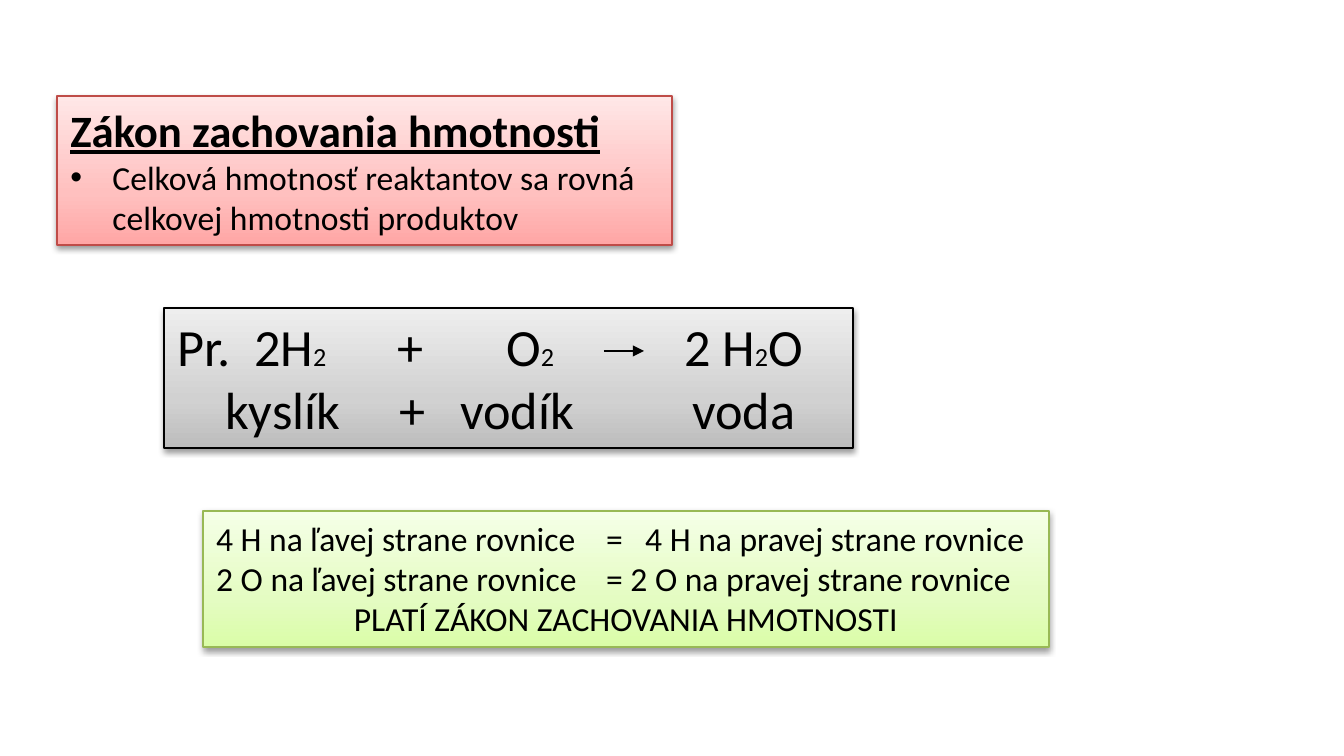
from lxml import etree
from pptx import Presentation
from pptx.dml.color import RGBColor
from pptx.enum.shapes import MSO_CONNECTOR, MSO_SHAPE
from pptx.enum.text import MSO_ANCHOR, MSO_AUTO_SIZE, PP_ALIGN
from pptx.oxml.ns import qn
from pptx.util import Pt

EMU_PER_PX = 914400 / 134.4
TITLE_ONLY = 5
RECT = MSO_SHAPE.RECTANGLE
STRAIGHT = MSO_CONNECTOR.STRAIGHT
TOP = MSO_ANCHOR.TOP
GROW = MSO_AUTO_SIZE.SHAPE_TO_FIT_TEXT
LEFT, CENTER = PP_ALIGN.LEFT, PP_ALIGN.CENTER

COLORS = {
    "text": "000000",
    "red_line": "BF4C48",
    "gray_line": "000000",
    "green_line": "98B955",
}
GRADIENTS = {
    "red": ("FFA6A5", "FFC0BF", "FFE7E7"),
    "gray": ("BDBDBD", "D1D1D1", "EEEEEE"),
    "green": ("DAFDA7", "E4FCC2", "F5FFE7"),
}
STOPS = (0, 35, 100)


def px(n):
    return round(n * EMU_PER_PX)


def rgb(name):
    return RGBColor.from_string(COLORS[name])


def sub(parent, tag, **attrs):
    """Add a DrawingML child element with the given attributes."""
    return etree.SubElement(parent, qn(f"a:{tag}"), {k: str(v) for k, v in attrs.items()})


class Deck:
    font = "Calibri"

    def __init__(self, width, height):
        self.prs = Presentation()
        self.prs.slide_width, self.prs.slide_height = px(width), px(height)
        self.s = self.prs.slides.add_slide(self.prs.slide_layouts[TITLE_ONLY])

    def title_panel(self, x, y, w, h, theme):
        sp = self.s.shapes.title
        sp.left, sp.top, sp.width, sp.height = map(px, (x, y, w, h))
        return self.style_panel(sp, theme)

    def panel(self, x, y, w, h, theme):
        sp = self.s.shapes.add_shape(RECT, *map(px, (x, y, w, h)))
        return self.style_panel(sp, theme)

    def style_panel(self, sp, theme):
        """Apply gradient, outline and soft shadow; return the text frame."""
        sp.fill.gradient()
        sp.fill.gradient_angle = 90
        stops = sp._element.spPr.find(".//" + qn("a:gsLst"))
        for stop in list(stops):
            stops.remove(stop)
        for pos, color in zip(STOPS, GRADIENTS[theme]):
            sub(sub(stops, "gs", pos=pos * 1000), "srgbClr", val=color)
        sp.line.color.rgb = rgb(theme + "_line")
        sp.line.width = Pt(0.75)
        sp.shadow.inherit = False
        effects = sp._element.spPr.find(qn("a:effectLst"))
        shadow = sub(effects, "outerShdw", blurRad=Pt(3.1), dist=Pt(1.6),
                     dir=90 * 60000, rotWithShape=0)
        sub(sub(shadow, "srgbClr", val="000000"), "alpha", val=38000)
        tf = sp.text_frame
        tf.word_wrap, tf.auto_size, tf.vertical_anchor = True, GROW, TOP
        return tf

    def paragraph(self, tf, text, size, align=LEFT, tabs=(), bullet_indent=0,
                  bold=False, underline=False, small=None):
        """Add a paragraph; text between | marks takes the size small."""
        p = tf.paragraphs[0]
        if p.runs:
            p = tf.add_paragraph()
        p.alignment = align
        pPr = p._p.get_or_add_pPr()
        if bullet_indent:
            pPr.set("marL", str(px(bullet_indent)))
            pPr.set("indent", str(-px(bullet_indent)))
            sub(pPr, "buFont", typeface="Arial")
            sub(pPr, "buChar", char="•")
        if tabs:
            tab_list = sub(pPr, "tabLst")
            for tab in tabs:
                sub(tab_list, "tab", pos=px(tab), algn="l")
        p.font.name, p.font.size = self.font, Pt(size)
        p.font.bold, p.font.underline = bold, underline
        p.font.color.rgb = rgb("text")
        for i, part in enumerate(text.split("|")):
            r = p.add_run()
            r.text = part
            if small:
                r.font.size = Pt(small if i % 2 else size)

    def arrow(self, x1, y1, x2, y2):
        cxn = self.s.shapes.add_connector(STRAIGHT, *map(px, (x1, y1, x2, y2)))
        cxn.line.color.rgb = rgb("text")
        cxn.line.width = Pt(0.75)
        sub(cxn.line._get_or_add_ln(), "tailEnd", type="triangle")
        sub(cxn._element.spPr, "effectLst")


def main():
    deck = Deck(1344, 756)

    law = deck.title_panel(57, 96, 615, 149, "red")
    deck.paragraph(law, "Zákon zachovania hmotnosti", 24, bold=True, underline=True)
    deck.paragraph(law, "Celková hmotnosť reaktantov sa rovná celkovej hmotnosti produktov",
                   18, bullet_indent=42)

    equation = deck.panel(164, 308, 689, 140, "gray")
    deck.paragraph(equation, "Pr.\t2H|2|\t+\tO|2|\t2 H|2|O", 28,
                   tabs=(77, 220, 329, 507), small=14)
    deck.paragraph(equation, "\tkyslík\t+\tvodík\tvoda", 28, tabs=(48, 222, 283, 515))
    deck.arrow(604, 351, 644, 351)

    balance = deck.panel(203, 511, 846, 136, "green")
    deck.paragraph(balance, "4 H na ľavej strane rovnice\t=\t4 H na pravej strane rovnice",
                   18, tabs=(390, 429))
    deck.paragraph(balance, "2 O na ľavej strane rovnice\t= 2 O na pravej strane rovnice",
                   18, tabs=(390,))
    deck.paragraph(balance, "PLATÍ ZÁKON ZACHOVANIA HMOTNOSTI", 18, align=CENTER)

    deck.prs.save("out.pptx")


if __name__ == "__main__":
    main()
